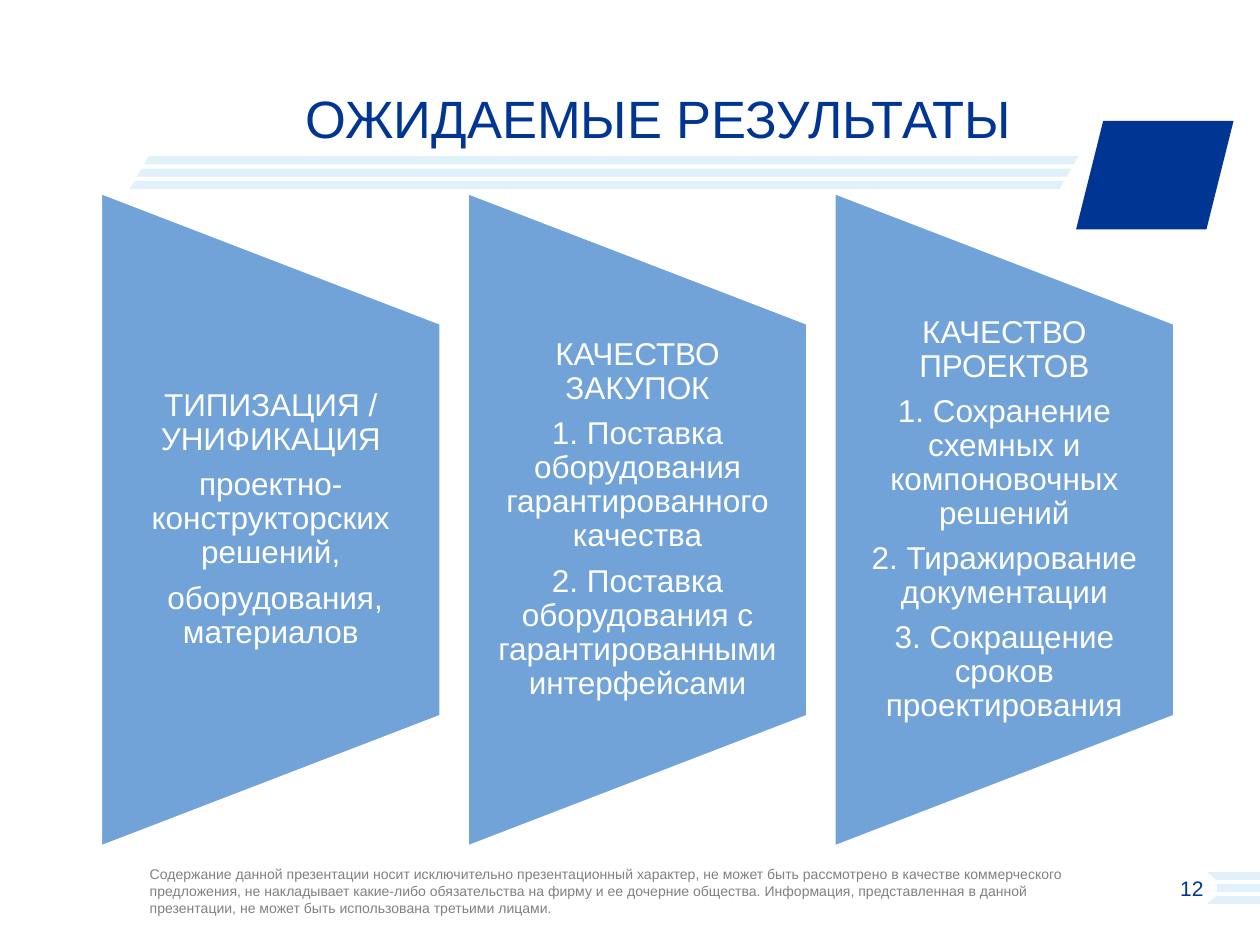
from pptx import Presentation
from pptx.dml.color import RGBColor
from pptx.enum.shapes import MSO_SHAPE
from pptx.enum.text import MSO_ANCHOR, PP_ALIGN
from pptx.util import Inches, Pt

TRAPEZOID = MSO_SHAPE.FLOWCHART_MANUAL_OPERATION
BLOCK = MSO_SHAPE.PARALLELOGRAM
MIDDLE, BOTTOM = MSO_ANCHOR.MIDDLE, MSO_ANCHOR.BOTTOM
LEFT, CENTER, RIGHT = PP_ALIGN.LEFT, PP_ALIGN.CENTER, PP_ALIGN.RIGHT

WIDE, HIGH = Inches(10), Inches(7.5)
FONT = "Arial"
COLORS = {
    "navy": "003594",
    "pale": "E0F1FA",
    "blue": "71A3D8",
    "gray": "808080",
    "white": "FFFFFF",
}

TITLE = "ОЖИДАЕМЫЕ РЕЗУЛЬТАТЫ"
NOTICE = (
    "Содержание данной презентации носит исключительно презентационный "
    "характер, не может быть рассмотрено в качестве коммерческого "
    "предложения, не накладывает какие-либо обязательства на фирму и ее "
    "дочерние общества. Информация, представленная в данной презентации, "
    "не может быть использована третьими лицами."
)
RESULTS = [
    [
        "ТИПИЗАЦИЯ / УНИФИКАЦИЯ",
        "проектно-конструкторских решений,",
        " оборудования, материалов",
    ],
    [
        "КАЧЕСТВО ЗАКУПОК",
        "1. Поставка оборудования гарантированного качества",
        "2. Поставка оборудования с гарантированными интерфейсами",
    ],
    [
        "КАЧЕСТВО ПРОЕКТОВ",
        "1. Сохранение схемных и компоновочных решений",
        "2. Тиражирование документации",
        "3. Сокращение сроков проектирования",
    ],
]


def area(x, y, w, h):
    """Turn percents of the slide's size into a box of lengths."""
    return [round(n * side / 100)
            for n, side in zip((x, y, w, h), (WIDE, HIGH) * 2)]


def color(name):
    return RGBColor.from_string(COLORS[name])


def paint(shape, fill):
    shape.shadow.inherit = False
    shape.fill.solid()
    shape.fill.fore_color.rgb = color(fill)
    shape.line.fill.background()


def write(frame, lines, size, ink, align=LEFT, anchor=MIDDLE, lead=None, gap=0):
    frame.word_wrap = True
    frame.vertical_anchor = anchor
    for i, line in enumerate(lines):
        para = frame.paragraphs[0] if i == 0 else frame.add_paragraph()
        para.text = line
        para.alignment = align
        para.line_spacing = lead
        para.space_before, para.space_after = Pt(0), Pt(gap)
        para.font.name = FONT
        para.font.size = Pt(size)
        para.font.color.rgb = color(ink)


def add_title(slide, box):
    title = slide.shapes.title
    title.left, title.top, title.width, title.height = box
    write(title.text_frame, [TITLE], 30, "navy", CENTER, BOTTOM, 0.9)


def add_label(slide, box, text, size, ink, align=LEFT):
    label = slide.shapes.add_textbox(*box)
    write(label.text_frame, [text], size, ink, align)


def add_bars(slide, box, start, end):
    """Draw three bars; start and end give the edges at a share of the height."""
    x, y, w, h = box
    for row in range(3):
        top = row * 0.375
        low = top + 0.25
        edge = [(start(top), top), (end(top), top), (end(low), low), (start(low), low)]
        first, *rest = [(x + w * a, y + h * b) for a, b in edge]
        path = slide.shapes.build_freeform(*first)
        path.add_line_segments(rest)
        paint(path.convert_to_shape(), "pale")


def add_mark(slide, box):
    paint(slide.shapes.add_shape(BLOCK, *box), "navy")


def add_result(slide, box, lines):
    x, y, w, h = box
    shape = slide.shapes.add_shape(
        TRAPEZOID, x + (w - h) // 2, y + (h - w) // 2, h, w)
    shape.rotation = 270
    paint(shape, "blue")
    shape.line.color.rgb = color("white")
    shape.line.width = Pt(1.5)

    text = slide.shapes.add_textbox(x, y + h // 5, w, h * 3 // 5)
    frame = text.text_frame
    frame.margin_left = frame.margin_right = Inches(0.12)
    frame.margin_top = frame.margin_bottom = 0
    write(frame, lines, 18, "white", CENTER, lead=0.9, gap=6.3)


def add_results(slide, box):
    x, y, w, h = box
    gap = w // 40
    count = len(RESULTS)
    wide = (w - gap * (count - 1)) // count
    for i, lines in enumerate(RESULTS):
        add_result(slide, (x + i * (wide + gap), y, wide, h), lines)


def main():
    deck = Presentation()
    deck.slide_width, deck.slide_height = WIDE, HIGH
    slide = deck.slides.add_slide(deck.slide_layouts[5])

    add_bars(slide, area(95.8, 92.27, 4.2, 3.4),
             lambda t: 0.19 * (1 - (2 * t - 1) ** 4), lambda t: 1)
    add_mark(slide, area(85.4, 12.8, 12.5, 11.47))
    add_bars(slide, area(10.3, 16.53, 75.3, 3.47),
             lambda t: 0.02 * (1 - t), lambda t: 1 - 0.02 * t)
    add_label(slide, area(10.9, 90.93, 75.7, 6.67), NOTICE, 8, "gray")
    add_title(slide, area(7.2, 5.33, 90.2, 11.2))
    add_label(slide, area(92.3, 92.27, 4.2, 3.47), "12", 12, "navy", RIGHT)
    add_results(slide, area(8, 20.4, 85.2, 69.2))

    deck.save("out.pptx")


if __name__ == "__main__":
    main()
